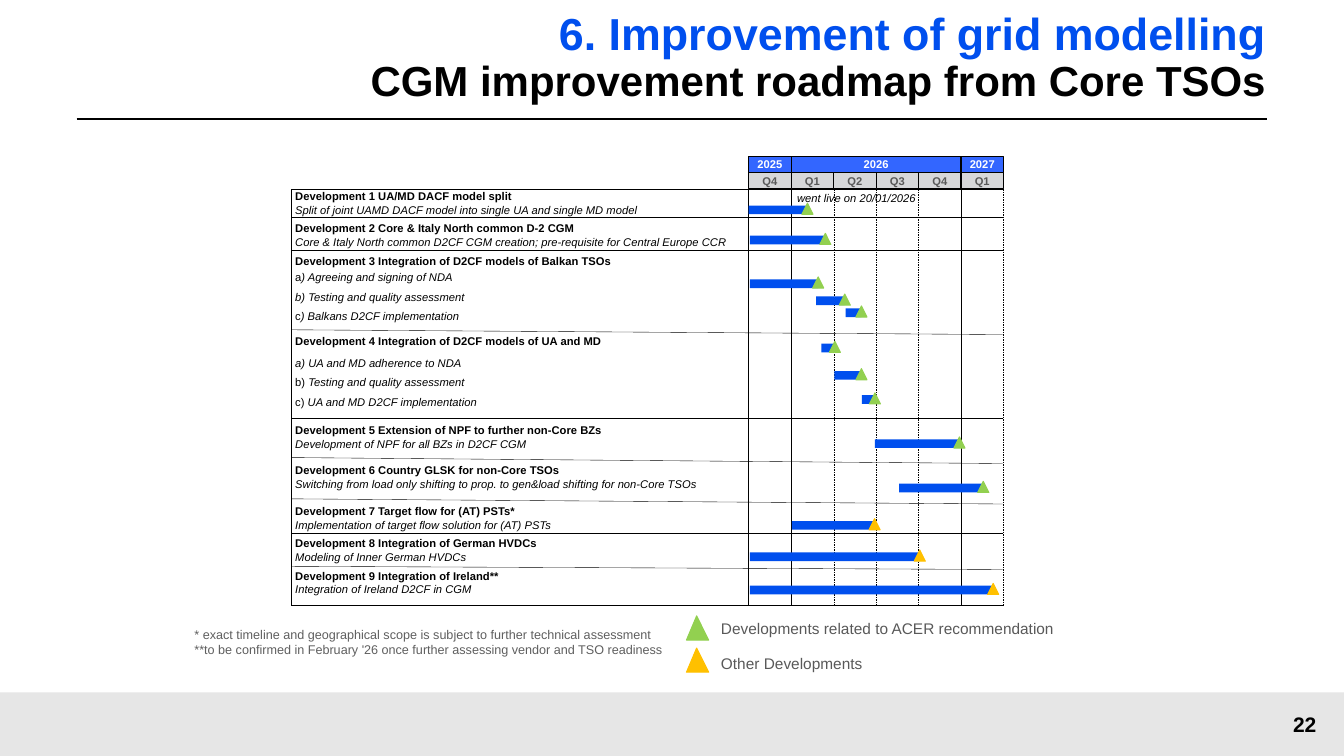
"""Build the roadmap slide for grid model improvements."""
from dataclasses import dataclass

from lxml.etree import SubElement
from pptx import Presentation
from pptx.dml.color import RGBColor as Rgb
from pptx.enum.dml import MSO_LINE_DASH_STYLE as Dash
from pptx.enum.shapes import MSO_CONNECTOR as Link, MSO_SHAPE as Preset
from pptx.enum.text import MSO_ANCHOR as Anchor, PP_ALIGN as Align
from pptx.oxml.ns import qn
from pptx.util import Cm, Pt


@dataclass(frozen=True)
class Theme:
    """Hold the colours and type sizes of the slide."""
    font: str = "Arial"
    black: str = "000000"
    white: str = "FFFFFF"
    blue: str = "004FEE"
    year: str = "3366FF"
    quarter: str = "D6D7D9"
    footer: str = "E6E6E6"
    grey: str = "595959"
    note: str = "5F5F5F"
    acer: str = "92D050"
    other: str = "FFC000"
    title_size: float = 32
    subtitle_size: float = 30
    page_size: float = 15
    legend_size: float = 11
    note_size: float = 9
    chart_size: float = 8


THEME = Theme()
AXIS_LEFT, QUARTER, HEADER_TOP, HEADER_ROW = 18.87, 1.07, 3.94, 0.41
CHART_LEFT, CHART_TOP, CHART_BOTTOM, CHART_RIGHT = 7.34, 4.77, 15.26, 25.27
LABEL_LEFT, LABEL_WIDTH, LABEL_HEIGHT = 7.44, 11.3, 0.33
BAR_HEIGHT, MARK = 0.22, 0.28

YEARS = [("2025", 0, 1), ("2026", 1, 4), ("2027", 5, 1)]
QUARTERS = ["Q4", "Q1", "Q2", "Q3", "Q4", "Q1"]
SEPARATORS = [(5.46, 5.46), (6.3, 6.3), (8.31, 8.43), (10.54, 10.54),
              (11.53, 11.68), (12.57, 12.7), (13.44, 13.44), (14.27, 14.35)]
DEVELOPMENTS = [
    (4.78, "Development 1 UA/MD DACF model split",
     [(5.13, "", "Split of joint UAMD DACF model into single UA and single MD model")]),
    (5.59, "Development 2 Core & Italy North common D-2 CGM",
     [(5.94, "", "Core & Italy North common D2CF CGM creation; "
       "pre-requisite for Central Europe CCR")]),
    (6.4, "Development 3 Integration of D2CF models of Balkan TSOs",
     [(6.81, "a", ") Agreeing and signing of NDA"),
      (7.32, "", "b) Testing and quality assessment"),
      (7.8, "c", ") Balkans D2CF implementation")]),
    (8.43, "Development 4 Integration of D2CF models of UA and MD",
     [(8.97, "", "a) UA and MD adherence to NDA"),
      (9.47, "b) ", "Testing and quality assessment"),
      (9.96, "c) ", "UA and MD D2CF implementation")]),
    (10.67, "Development 5 Extension of NPF to further non-Core BZs",
     [(11.02, "", "Development of NPF for all BZs in D2CF CGM")]),
    (11.68, "Development 6 Country GLSK for non-Core TSOs",
     [(12.04, "", "Switching from load only shifting to prop. to gen&load "
       "shifting for non-Core TSOs")]),
    (12.7, "Development 7 Target flow for (AT) PSTs*",
     [(13.06, "", "Implementation of target flow solution for (AT) PSTs")]),
    (13.51, "Development 8 Integration of German HVDCs",
     [(13.87, "", "Modeling of Inner German HVDCs")]),
    (14.35, "Development 9 Integration of Ireland**",
     [(14.68, "", "Integration of Ireland D2CF in CGM")]),
]
ACER_BARS = [(18.87, 20.35, 5.18), (18.9, 20.8, 5.94), (18.9, 20.62, 7.04),
             (20.57, 21.29, 7.47), (21.31, 21.71, 7.77), (20.7, 21.04, 8.66),
             (21.03, 21.71, 9.35), (21.72, 22.05, 9.96), (22.05, 24.18, 11.07),
             (22.66, 24.78, 12.19)]
OTHER_BARS = [(19.96, 22.04, 13.13), (18.9, 23.18, 13.92), (18.9, 25.03, 14.76)]
LEGEND = [(15.52, 15.47, THEME.acer, "Developments related to ACER recommendation"),
          (16.33, 16.36, THEME.other, "Other Developments")]
NOTES = ["* exact timeline and geographical scope is subject to further technical assessment",
         "**to be confirmed in February '26 once further assessing vendor and TSO readiness"]


def assign(target, formats):
    """Set each attribute in formats on the target."""
    for name, value in formats.items():
        setattr(target, name, value)


def add_run(paragraph, words, size, color, bold=False, italic=False):
    """Append a styled run to a paragraph."""
    run = paragraph.add_run()
    run.text = words
    assign(run.font, {"name": THEME.font, "size": Pt(size), "bold": bold, "italic": italic})
    run.font.color.rgb = Rgb.from_string(color)


def set_frame(frame, inset_x, inset_y, anchor=Anchor.TOP):
    """Set insets, anchor and wrapping of a text frame."""
    assign(frame, {"margin_left": Cm(inset_x), "margin_right": Cm(inset_x),
                   "margin_top": Cm(inset_y), "margin_bottom": Cm(inset_y),
                   "vertical_anchor": anchor, "word_wrap": True})


def add_text(slide, box, insets=(0.25, 0.13), anchor=Anchor.TOP):
    """Add a text box and return its text frame."""
    frame = slide.shapes.add_textbox(*map(Cm, box)).text_frame
    set_frame(frame, *insets, anchor)
    return frame


def add_block(slide, preset, box, fill, outline=None):
    """Add a filled preset shape with an optional outline."""
    block = slide.shapes.add_shape(preset, *map(Cm, box))
    block.shadow.inherit = False
    block.fill.solid()
    block.fill.fore_color.rgb = Rgb.from_string(fill)
    if outline:
        block.line.color.rgb = Rgb.from_string(outline)
        block.line.width = Pt(0.75)
    else:
        block.line.fill.background()
    return block


def add_line(slide, ends, width=0.25, dash=None):
    """Add a straight black line."""
    line = slide.shapes.add_connector(Link.STRAIGHT, *map(Cm, ends))
    line.line.color.rgb = Rgb.from_string(THEME.black)
    assign(line.line, {"width": Pt(width), "dash_style": dash})
    SubElement(line._element.spPr, qn("a:effectLst"))
    return line


def add_header_cell(slide, words, row, first, span, fill, color):
    """Add one year or quarter cell above the timeline."""
    box = (AXIS_LEFT + first * QUARTER, HEADER_TOP + row * HEADER_ROW,
           span * QUARTER, HEADER_ROW)
    cell = add_block(slide, Preset.RECTANGLE, box, fill, THEME.black)
    set_frame(cell.text_frame, 0, 0.05, Anchor.MIDDLE)
    heading = cell.text_frame.paragraphs[0]
    heading.alignment = Align.CENTER
    add_run(heading, words, THEME.chart_size, color, bold=True)
    return cell


def add_label(slide, top, upright, italic="", bold=False):
    """Add one line of row text."""
    box = (LABEL_LEFT, top, LABEL_WIDTH, LABEL_HEIGHT)
    label = add_text(slide, box, (0, 0)).paragraphs[0]
    if upright:
        add_run(label, upright, THEME.chart_size, THEME.black, bold=bold)
    if italic:
        add_run(label, italic, THEME.chart_size, THEME.black, italic=True)


def add_bar(slide, start, end, top, color):
    """Add a bar with a milestone triangle centred on its end."""
    add_block(slide, Preset.RECTANGLE, (start, top, end - start, BAR_HEIGHT), THEME.blue)
    mark = (end - MARK / 2, top - 0.06, MARK, MARK)
    add_block(slide, Preset.ISOSCELES_TRIANGLE, mark, color, color)


def add_frame(slide):
    """Add the title, rule, footer band and page number."""
    add_block(slide, Preset.RECTANGLE, (0, 17.45, 33.87, 1.6), THEME.footer)
    add_line(slide, (1.93, 3, 31.93, 3), 1.5)
    page = add_text(slide, (31.88, 17.45, 2, 1.6), anchor=Anchor.MIDDLE).paragraphs[0]
    page.alignment = Align.CENTER
    add_run(page, "22", THEME.page_size, THEME.black, bold=True)
    title = add_text(slide, (7.72, 0, 24.2, 2.97), (0, 0.5), Anchor.MIDDLE).paragraphs[0]
    assign(title, {"alignment": Align.RIGHT, "line_spacing": 0.9})
    add_run(title, "6. Improvement of grid modelling", THEME.title_size, THEME.blue, bold=True)
    title.add_line_break()
    add_run(title, "CGM improvement roadmap from Core TSOs", THEME.subtitle_size,
            THEME.black, bold=True)


def add_grid(slide):
    """Add the timeline header and the grid lines."""
    years = [add_header_cell(slide, words, 0, first, span, THEME.year, THEME.white)
             for words, first, span in YEARS]
    for index, words in enumerate(QUARTERS):
        add_header_cell(slide, words, 1, index, 1, THEME.quarter, THEME.grey)
    for edge in range(len(QUARTERS) + 1):
        x = AXIS_LEFT + edge * QUARTER
        divider = add_line(slide, (x, CHART_TOP, x, CHART_BOTTOM), 0.25 if edge else 0.75,
                           None if edge in (0, 1, 5) else Dash.DASH)
        if edge == 5:
            divider.begin_connect(years[-1], 1)
    add_line(slide, (CHART_LEFT, CHART_TOP, CHART_LEFT, CHART_BOTTOM), 0.75)
    for y in (CHART_TOP, CHART_BOTTOM):
        add_line(slide, (CHART_LEFT, y, CHART_RIGHT, y), 0.75)
    for left_y, right_y in SEPARATORS:
        add_line(slide, (CHART_LEFT, left_y, CHART_RIGHT, right_y))


def add_legend(slide):
    """Add the milestone legend and the footnotes."""
    for mark_top, text_top, color, words in LEGEND:
        mark = add_block(slide, Preset.ISOSCELES_TRIANGLE, (17.3, mark_top, 0.56, 0.61),
                         color, color)
        mark.adjustments[0] = 0.46
        entry = add_text(slide, (17.92, text_top, 12, 0.74)).paragraphs[0]
        add_run(entry, words, THEME.legend_size, THEME.grey)
    notes = add_text(slide, (4.65, 15.67, 13.79, 1.02))
    notes.add_paragraph()
    for note, words in zip(notes.paragraphs, NOTES):
        add_run(note, words, THEME.note_size, THEME.note)


def main():
    """Build and save the slide."""
    deck = Presentation()
    assign(deck, {"slide_width": Cm(33.87), "slide_height": Cm(19.05)})
    slide = deck.slides.add_slide(deck.slide_layouts[6])
    add_frame(slide)
    add_legend(slide)
    add_grid(slide)
    for top, heading, steps in DEVELOPMENTS:
        add_label(slide, top, heading, bold=True)
        for step in steps:
            add_label(slide, *step)
    for bars, color in ((ACER_BARS, THEME.acer), (OTHER_BARS, THEME.other)):
        for bar in bars:
            add_bar(slide, *bar, color)
    remark = add_text(slide, (19.84, 4.7, 6.73, 0.61)).paragraphs[0]
    add_run(remark, "went live on 20/01/2026", THEME.chart_size, THEME.black, italic=True)
    deck.save("out.pptx")


if __name__ == "__main__":
    main()
